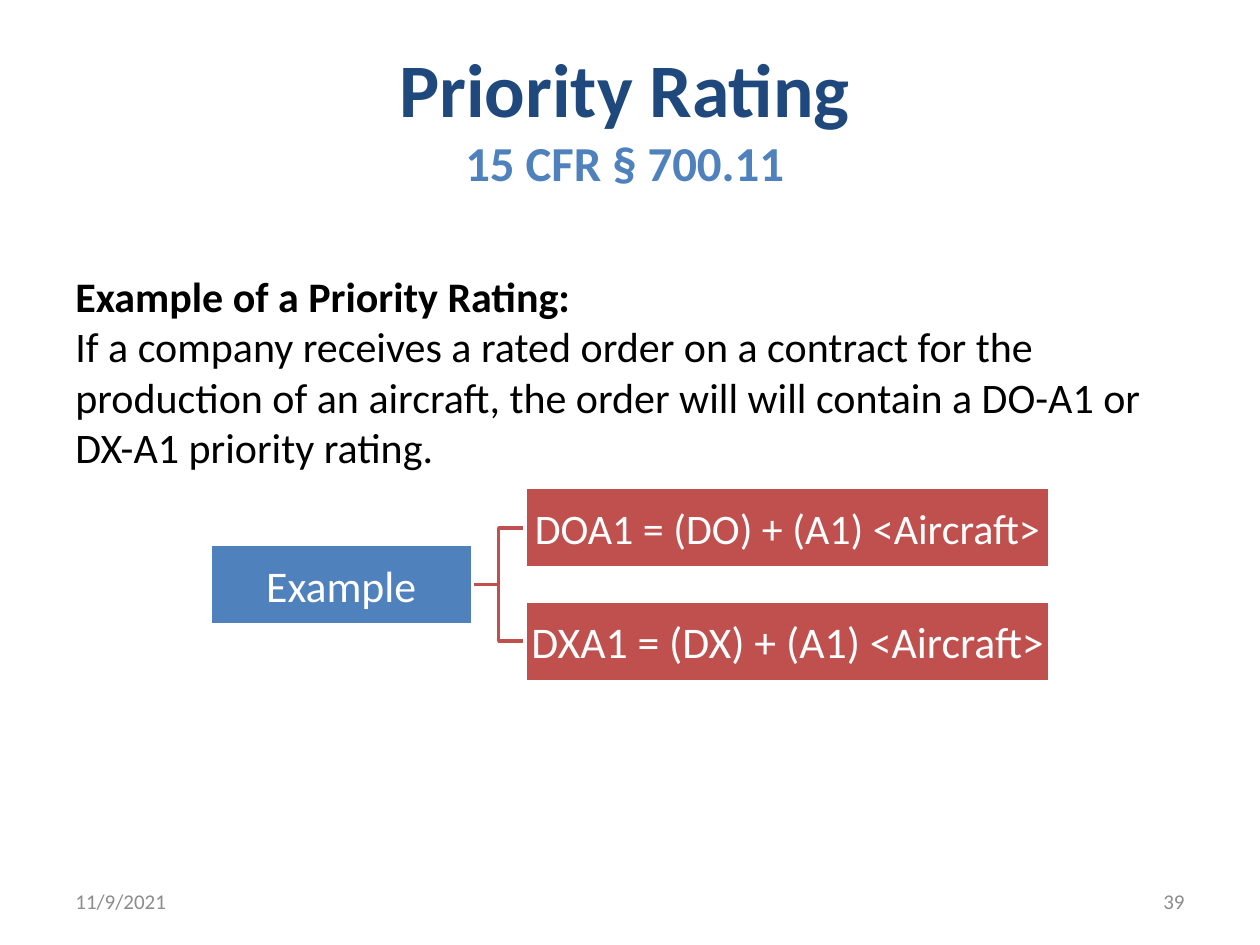
from pptx import Presentation
from pptx.dml.color import RGBColor
from pptx.enum.shapes import MSO_SHAPE as Shape
from pptx.enum.text import MSO_ANCHOR as Anchor, PP_ALIGN as Align
from pptx.util import Pt

NAVY, BLUE, RED = "1F497D", "4F81BD", "C0504D"
BLACK, WHITE, GRAY = "000000", "FFFFFF", "8C8C8C"


def color(code):
    return RGBColor.from_string(code)


def write(para, text, size=24, fill=BLACK, bold=False, font="Calibri"):
    """Add one formatted run to a paragraph."""
    run = para.add_run()
    run.text = text
    run.font.name = font
    run.font.size = Pt(size)
    run.font.bold = bold
    run.font.color.rgb = color(fill)


class Deck:
    def __init__(self, wide, high):
        self.prs = Presentation()
        self.prs.slide_width, self.prs.slide_height = Pt(wide), Pt(high)
        self.slide = self.prs.slides.add_slide(self.prs.slide_layouts[6])
        self.shapes = self.slide.shapes

    def text(self, area, align=Align.LEFT, anchor=Anchor.MIDDLE):
        """Add a wrapping text box and return its first paragraph and frame."""
        frame = self.shapes.add_textbox(*map(Pt, area)).text_frame
        frame.word_wrap = True
        frame.vertical_anchor = anchor
        para = frame.paragraphs[0]
        para.alignment = align
        return para, frame

    def box(self, area, label, fill, size):
        rect = self.shapes.add_shape(Shape.RECTANGLE, *map(Pt, area))
        rect.shadow.inherit = False
        rect.fill.solid()
        rect.fill.fore_color.rgb = color(fill)
        rect.line.color.rgb = color(WHITE)
        rect.line.width = Pt(2)
        frame = rect.text_frame
        frame.word_wrap = True
        frame.vertical_anchor = Anchor.MIDDLE
        frame.margin_left = frame.margin_right = Pt(1.25)
        frame.margin_top = frame.margin_bottom = Pt(1.25)
        para = frame.paragraphs[0]
        para.alignment = Align.CENTER
        write(para, label, size=size, fill=WHITE)

    def elbow(self, x1, y1, x2, y2):
        """Draw an open line that turns halfway across."""
        mid = (x1 + x2) / 2
        pen = self.shapes.build_freeform(Pt(x1), Pt(y1))
        turns = [(mid, y1), (mid, y2), (x2, y2)]
        pen.add_line_segments([(Pt(x), Pt(y)) for x, y in turns], close=False)
        line = pen.convert_to_shape()
        line.shadow.inherit = False
        line.fill.background()
        line.line.color.rgb = color(RED)
        line.line.width = Pt(2)


def main():
    deck = Deck(720, 540)

    title, _ = deck.text((144, 21.6, 426, 90), Align.CENTER)
    write(title, "Priority Rating", size=43.2, fill=NAVY, bold=True)
    title.add_line_break()
    write(title, "15 CFR § 700.11", size=27.9, fill=BLUE, bold=True)

    head, body = deck.text((36, 151, 648, 331), anchor=Anchor.TOP)
    write(head, "Example of a Priority Rating:", bold=True)
    write(body.add_paragraph(),
          "If a company receives a rated order on a contract for the "
          "production of an aircraft, the order will will contain a DO-A1 or "
          "DX-A1 priority rating.")

    high, mid, step = 46, 334, 32.4
    left, wide, gap = 120, 150, 30
    start, end = left + wide, left + wide + gap
    ratings = [("DOA1 = (DO) + (A1) <Aircraft>", mid - step, 24),
               ("DXA1 = (DX) + (A1) <Aircraft>", mid + step, 25)]
    for _, y, _ in ratings:
        deck.elbow(start, mid, end, y)
    deck.box((left, mid - high / 2, wide, high), "Example", BLUE, 25)
    for label, y, size in ratings:
        deck.box((end, y - high / 2, 300, high), label, RED, size)

    for x, label, align in [(36, "11/9/2021", Align.LEFT),
                            (516, "39", Align.RIGHT)]:
        foot, _ = deck.text((x, 500.5, 168, 28.8), align)
        write(foot, label, size=12, fill=GRAY)

    deck.prs.save("out.pptx")


if __name__ == "__main__":
    main()
